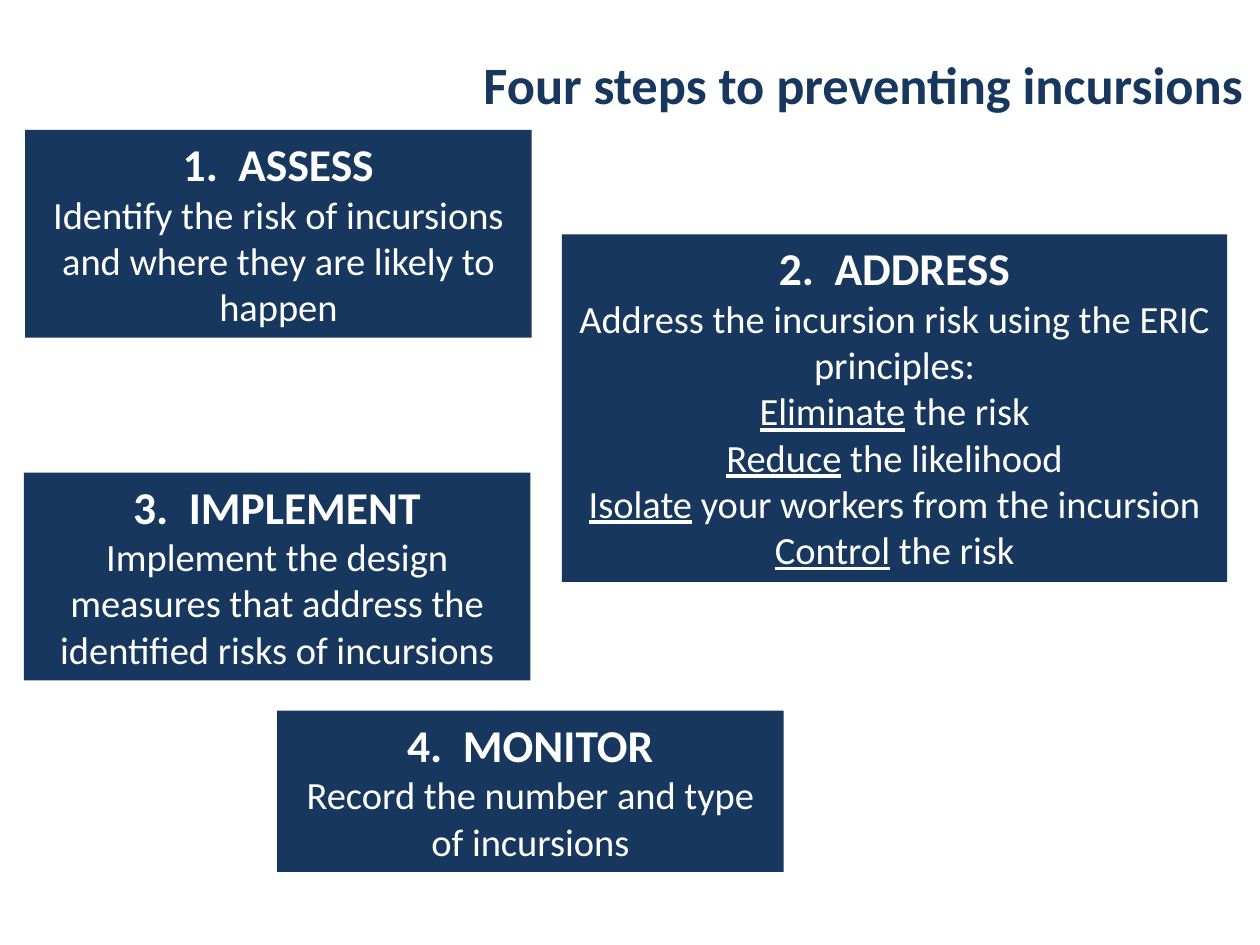
from pptx import Presentation
from pptx.dml.color import RGBColor
from pptx.enum.shapes import MSO_SHAPE as Shape
from pptx.enum.text import MSO_ANCHOR as Anchor, MSO_AUTO_SIZE as AutoSize, PP_ALIGN as Align
from pptx.util import Inches, Pt

COLORS = {"navy": "17375E", "white": "FFFFFF"}
FONT = "Calibri"
TITLE_ONLY = 5

# Each step: box (left, top, width, height), heading, explanation, principles (keyword, rest)
STEPS = [
    ((0.2, 1.03, 4.02, 1.65), "1.  ASSESS",
     "Identify the risk of incursions and where they are likely to happen", []),
    ((4.46, 1.86, 5.28, 2.76), "2.  ADDRESS",
     "Address the incursion risk using the ERIC principles:",
     [("Eliminate", " the risk"),
      ("Reduce", " the likelihood"),
      ("Isolate", " your workers from the incursion"),
      ("Control", " the risk")]),
    ((0.19, 3.75, 4.02, 1.65), "3.  IMPLEMENT",
     "Implement the design measures that address the identified risks of incursions", []),
    ((2.2, 5.64, 4.02, 1.28), "4.  MONITOR",
     "Record the number and type of incursions", []),
]


def style_run(run, size, color, bold=False, underline=False):
    font = run.font
    font.name, font.size, font.bold, font.underline = FONT, Pt(size), bold, underline
    font.color.rgb = RGBColor.from_string(COLORS[color])


def add_title(slide, box, wording):
    title = slide.shapes.title
    title.left, title.top, title.width, title.height = map(Inches, box)
    frame = title.text_frame
    frame.text = wording
    frame.auto_size = AutoSize.NONE
    frame.vertical_anchor = Anchor.MIDDLE
    heading = frame.paragraphs[0]
    heading.alignment = Align.RIGHT
    style_run(heading.runs[0], 30, "navy", bold=True)


def add_step(slide, box, heading, explanation, principles):
    """Draw one filled step box; the keyword of each principle is underlined."""
    panel = slide.shapes.add_shape(Shape.RECTANGLE, *map(Inches, box))
    panel.shadow.inherit = False
    panel.fill.solid()
    panel.fill.fore_color.rgb = RGBColor.from_string(COLORS["navy"])
    panel.line.fill.background()

    frame = panel.text_frame
    frame.word_wrap = True
    frame.auto_size = AutoSize.SHAPE_TO_FIT_TEXT
    frame.vertical_anchor = Anchor.TOP
    frame.text = f"{heading}\n{explanation}"
    heading_line, explanation_line = frame.paragraphs
    style_run(heading_line.runs[0], 26, "white", bold=True)
    style_run(explanation_line.runs[0], 22, "white")

    for principle in principles:
        principle_line = frame.add_paragraph()
        for wording, underline in zip(principle, (True, False)):
            run = principle_line.add_run()
            run.text = wording
            style_run(run, 22, "white", underline=underline)
    for line in frame.paragraphs:
        line.alignment = Align.CENTER


def main():
    deck = Presentation()
    deck.slide_width, deck.slide_height = Inches(10), Inches(7.5)
    slide = deck.slides.add_slide(deck.slide_layouts[TITLE_ONLY])
    add_title(slide, (0.43, 0.34, 9.54, 0.65), "Four steps to preventing incursions")
    for step in STEPS:
        add_step(slide, *step)
    deck.save("out.pptx")


if __name__ == "__main__":
    main()
